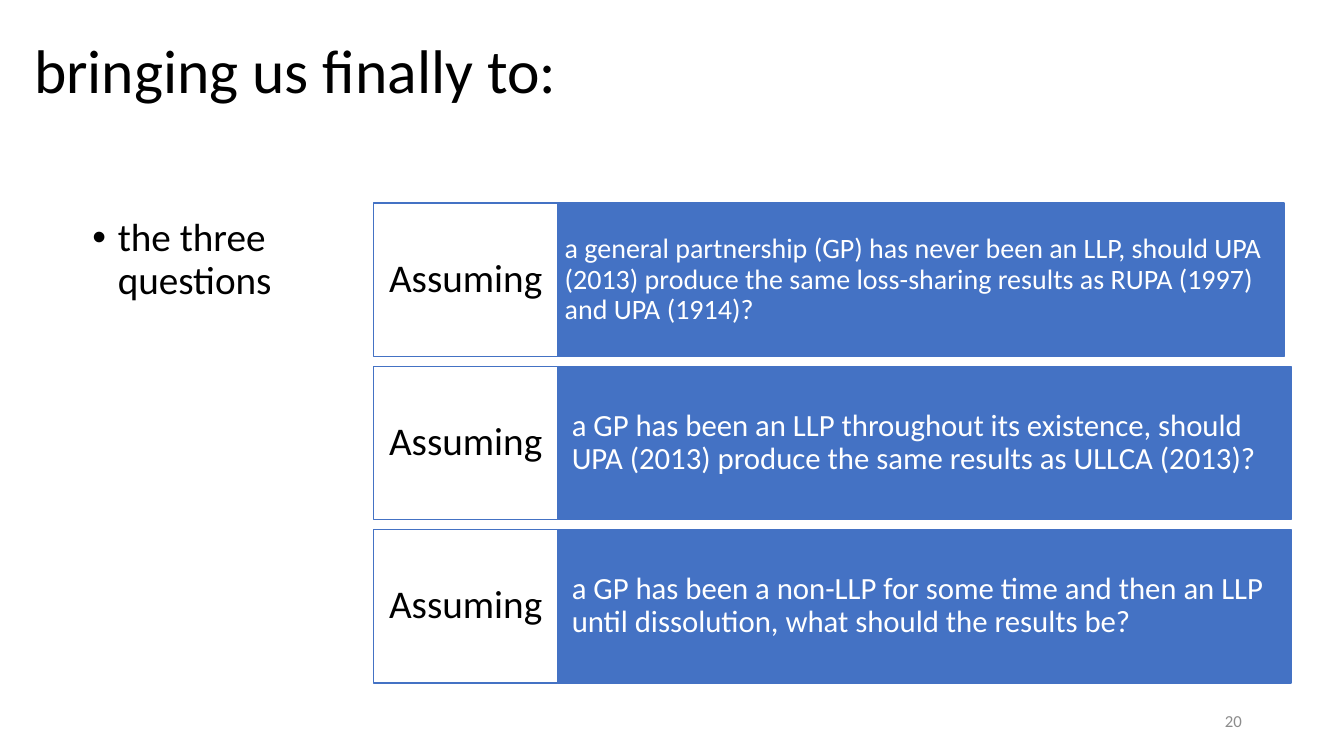
from lxml import etree
from pptx import Presentation
from pptx.dml.color import RGBColor
from pptx.enum.shapes import MSO_SHAPE
from pptx.enum.text import MSO_ANCHOR, PP_ALIGN
from pptx.oxml.ns import qn
from pptx.util import Cm, Pt

RECT = MSO_SHAPE.RECTANGLE
TOP, MIDDLE = MSO_ANCHOR.TOP, MSO_ANCHOR.MIDDLE
LEFT, CENTER, RIGHT = PP_ALIGN.LEFT, PP_ALIGN.CENTER, PP_ALIGN.RIGHT
COLORS = {"black": "000000", "white": "FFFFFF", "blue": "4472C4", "gray": "8C8C8C"}


def rgb(name):
    return RGBColor.from_string(COLORS[name])


class SlideBuilder:
    font = "Calibri"

    def __init__(self, slide):
        self.slide = slide

    def set_text(self, sp, text, size, color, align=LEFT, anchor=MIDDLE,
                 margins=(0.25, 0.13), line_spacing=0.9):
        tf = sp.text_frame
        tf.word_wrap = True
        tf.vertical_anchor = anchor
        tf.margin_left = tf.margin_right = Cm(margins[0])
        tf.margin_top = tf.margin_bottom = Cm(margins[1])
        p = tf.paragraphs[0]
        p.text = text
        p.alignment = align
        p.line_spacing = line_spacing
        r = p.runs[0]
        r.font.name = self.font
        r.font.size = Pt(size)
        r.font.color.rgb = rgb(color)
        return p

    def text(self, box, text, size, color="black", **style):
        sp = self.slide.shapes.add_textbox(*map(Cm, box))
        return self.set_text(sp, text, size, color, **style)

    def bullet(self, box, text, size):
        p = self.text(box, text, size, anchor=TOP)
        p.space_before = Pt(10)
        pPr = p._p.get_or_add_pPr()
        pPr.set("marL", str(Cm(0.64)))
        pPr.set("indent", str(Cm(-0.64)))
        etree.SubElement(pPr, qn("a:buFont")).set("typeface", "Arial")
        etree.SubElement(pPr, qn("a:buChar")).set("char", "•")

    def rect(self, box, fill, text, size, color, **style):
        sp = self.slide.shapes.add_shape(RECT, *map(Cm, box))
        sp.shadow.inherit = False
        sp.fill.solid()
        sp.fill.fore_color.rgb = rgb(fill)
        sp.line.color.rgb = rgb("blue")
        sp.line.width = Pt(1)
        self.set_text(sp, text, size, color, **style)


def main():
    prs = Presentation()
    prs.slide_width, prs.slide_height = Cm(33.87), Cm(19.05)
    s = SlideBuilder(prs.slides.add_slide(prs.slide_layouts[6]))

    # Title and bullet
    s.text((0.61, 0.84, 28.35, 2.01), "bringing us finally to:", 44)
    s.bullet((2.08, 5.36, 5.28, 12.09), "the three questions", 28)

    # Three questions: left edge, text size, wording
    questions = [
        (13.87, 20, "a general partnership (GP) has never been an LLP, should UPA (2013) "
                    "produce the same loss-sharing results as RUPA (1997) and UPA (1914)?"),
        (14.05, 22, "a GP has been an LLP throughout its existence, should UPA (2013) "
                    "produce the same results as ULLCA (2013)?"),
        (14.05, 22, "a GP has been a non-LLP for some time and then an LLP until "
                    "dissolution, what should the results be?"),
    ]
    top, pitch, height = 5.12, 4.11, 3.87
    for i, (left, size, question) in enumerate(questions):
        y = top + i * pitch
        s.rect((left, y, 18.49, height), "blue", question, size, "white",
               margins=(0.36, 0.99))
        s.rect((9.42, y, 4.63, height), "white", "Assuming", 28, "black",
               align=CENTER, margins=(0.25, 0.38))

    # Slide number
    s.text((23.93, 17.65, 7.62, 1.02), "20", 12, "gray", align=RIGHT, line_spacing=1.0)

    prs.save("out.pptx")


if __name__ == "__main__":
    main()
